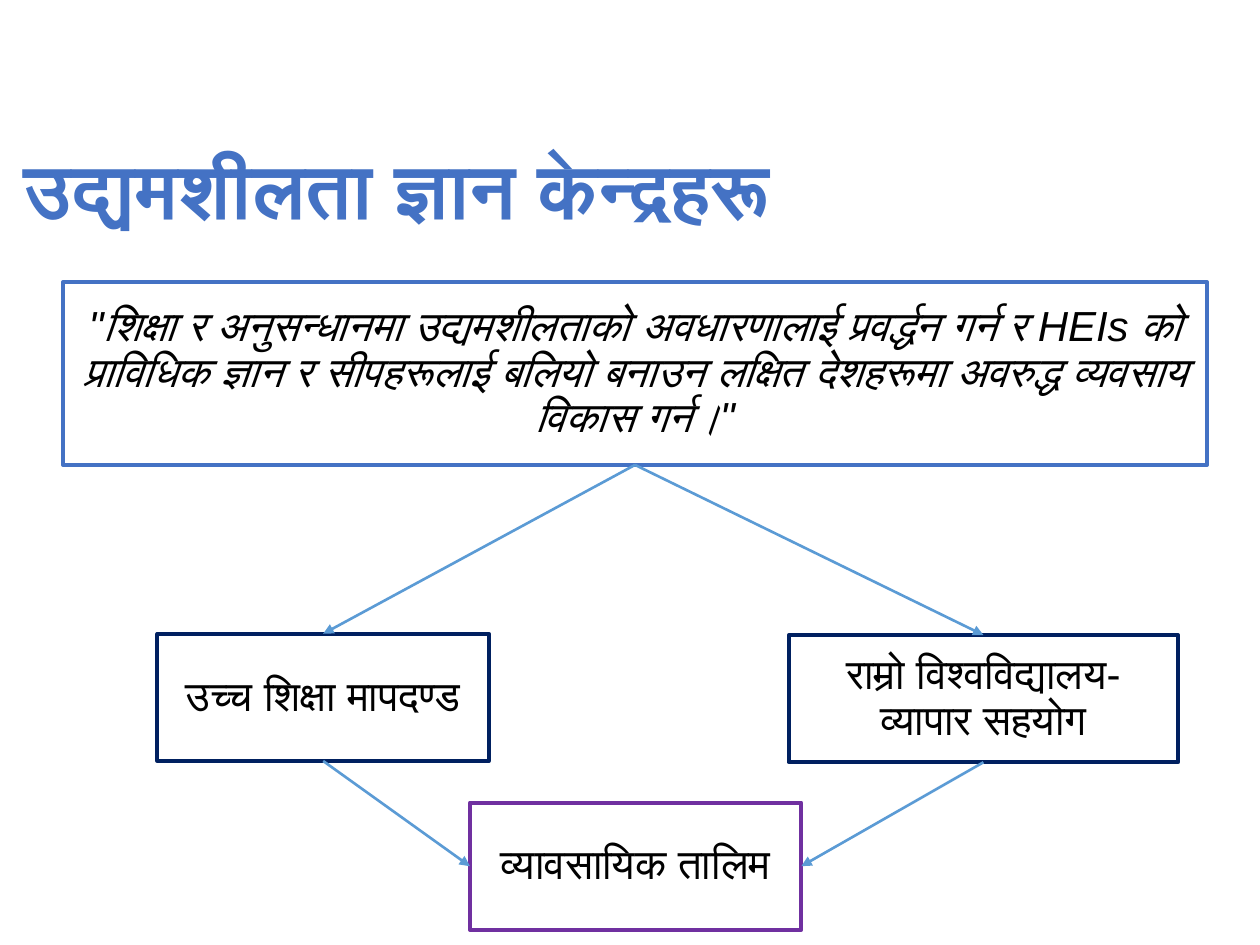
import lxml.etree
import pptx
import pptx.dml.color
import pptx.enum.shapes
import pptx.enum.text
import pptx.oxml.ns
import pptx.util

Inches = pptx.util.Inches
Pt = pptx.util.Pt
qualified = pptx.oxml.ns.qn
ALIGN = pptx.enum.text.PP_ALIGN
TOP, LEFT, BOTTOM, RIGHT = range(4)
BLUE, NAVY, PURPLE, ARROW_BLUE, BLACK = "4472C4", "002060", "7030A0", "5B9BD5", "000000"


def color(value):
    """Turn a hex string into a colour."""
    return pptx.dml.color.RGBColor.from_string(value)


def place(shape, left, top, width, height):
    """Move and size a shape, with lengths in inches."""
    values = {"left": left, "top": top, "width": width, "height": height}
    for name, value in values.items():
        setattr(shape, name, Inches(value))


def write(shape, text, align, ink, **font_values):
    """Write one paragraph with the shared text format."""
    frame = shape.text_frame
    frame_values = {
        "word_wrap": True,
        "auto_size": pptx.enum.text.MSO_AUTO_SIZE.NONE,
        "vertical_anchor": pptx.enum.text.MSO_ANCHOR.MIDDLE,
        "margin_left": Inches(0.1),
        "margin_right": Inches(0.1),
        "margin_top": Inches(0.05),
        "margin_bottom": Inches(0.05),
    }
    for name, value in frame_values.items():
        setattr(frame, name, value)
    para = frame.paragraphs[0]
    properties = para._p.get_or_add_pPr()
    properties.set("marL", "0")
    properties.set("indent", "0")
    lxml.etree.SubElement(properties, qualified("a:buNone"))
    para_values = {"alignment": align, "line_spacing": 0.9, "space_before": Pt(0)}
    for name, value in para_values.items():
        setattr(para, name, value)
    span = para.add_run()
    span.text = text
    for name, value in {"name": "Arial", "size": Pt(24), **font_values}.items():
        setattr(span.font, name, value)
    span.font.color.rgb = color(ink)
    complex_font = lxml.etree.SubElement(span._r.get_or_add_rPr(), qualified("a:cs"))
    complex_font.set("typeface", "Arial")


def outline(shape, stroke, width):
    """Give a shape or connector its line."""
    shape.line.color.rgb = color(stroke)
    shape.line.width = Pt(width)


def add_box(page, area, text, stroke):
    """Add an outlined box with a centred label."""
    box = page.shapes.add_shape(
        pptx.enum.shapes.MSO_SHAPE.RECTANGLE, *map(Inches, area))
    box.shadow.inherit = False
    box.fill.background()
    outline(box, stroke, 2.25)
    write(box, text, ALIGN.CENTER, BLACK)
    return box


def add_arrow(page, start, start_side, end, end_side):
    """Join two boxes with an arrow."""
    arrow = page.shapes.add_connector(
        pptx.enum.shapes.MSO_CONNECTOR.STRAIGHT, 0, 0, 0, 0)
    arrow.begin_connect(start, start_side)
    arrow.end_connect(end, end_side)
    outline(arrow, ARROW_BLUE, 1.5)
    head = lxml.etree.SubElement(arrow.line._get_or_add_ln(), qualified("a:tailEnd"))
    head.set("type", "triangle")
    lxml.etree.SubElement(arrow._element.spPr, qualified("a:effectLst"))


def main():
    """Build the slide and save it."""
    deck = pptx.Presentation()
    deck.slide_width, deck.slide_height = Inches(10), Inches(7.5)
    page = deck.slides.add_slide(deck.slide_layouts[1])

    title = page.shapes.title
    place(title, 0.09, 0.81, 9.91, 1.45)
    write(title, "उद्यमशीलता ज्ञान केन्द्रहरू", ALIGN.LEFT, BLUE, size=Pt(44), bold=True)

    goal = page.placeholders[1]
    place(goal, 0.5, 2.24, 9.08, 1.45)
    outline(goal, BLUE, 2.25)
    write(goal, '"शिक्षा र अनुसन्धानमा उद्यमशीलताको अवधारणालाई प्रवर्द्धन गर्न र HEIs को '
          'प्राविधिक ज्ञान र सीपहरूलाई बलियो बनाउन लक्षित देशहरूमा अवरुद्ध व्यवसाय '
          'विकास गर्न।"', ALIGN.CENTER, BLACK, italic=True)

    standards = add_box(page, (1.25, 5.03, 2.63, 1.01), "उच्च शिक्षा मापदण्ड", NAVY)
    cooperation = add_box(
        page, (6.26, 5.04, 3.09, 1.01), "राम्रो विश्वविद्यालय-व्यापार सहयोग", NAVY)
    training = add_box(page, (3.73, 6.37, 2.63, 1.01), "व्यावसायिक तालिम", PURPLE)

    for box, side in ((standards, LEFT), (cooperation, RIGHT)):
        add_arrow(page, goal, BOTTOM, box, TOP)
        add_arrow(page, box, BOTTOM, training, side)

    deck.save("out.pptx")


if __name__ == "__main__":
    main()
